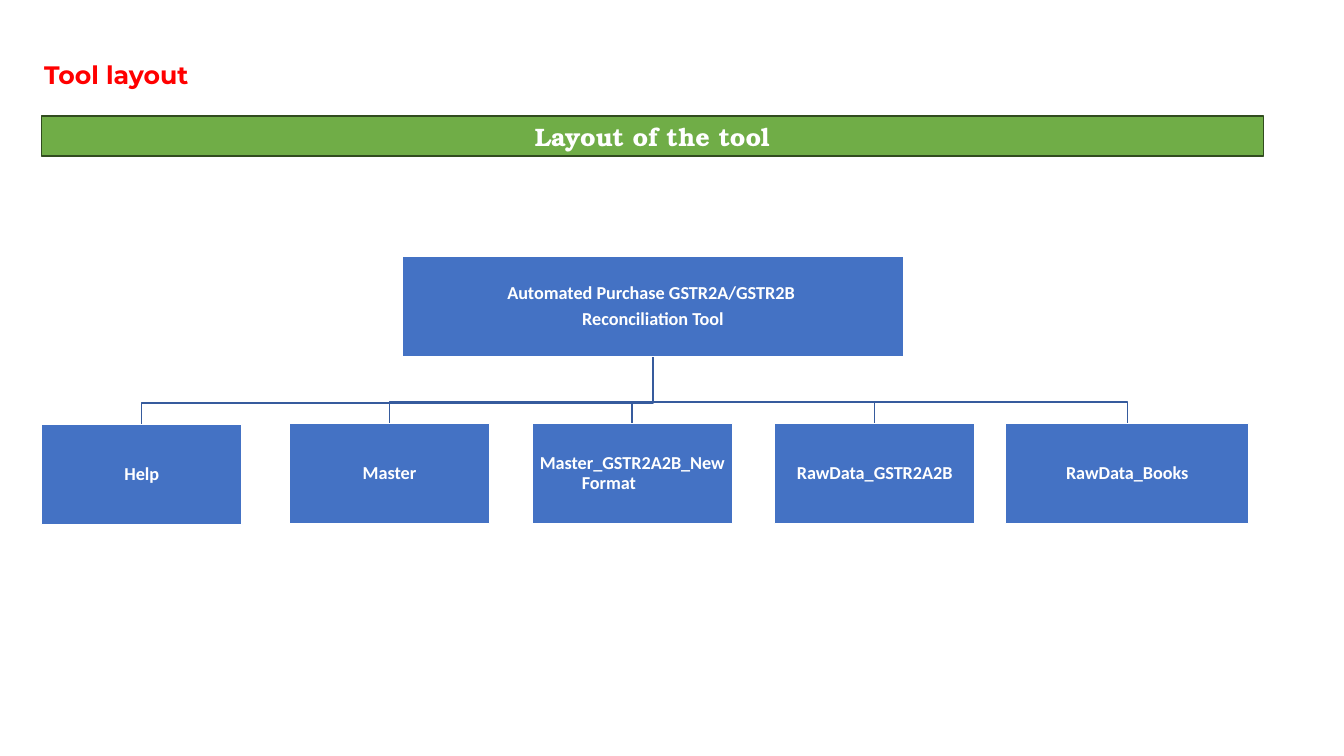
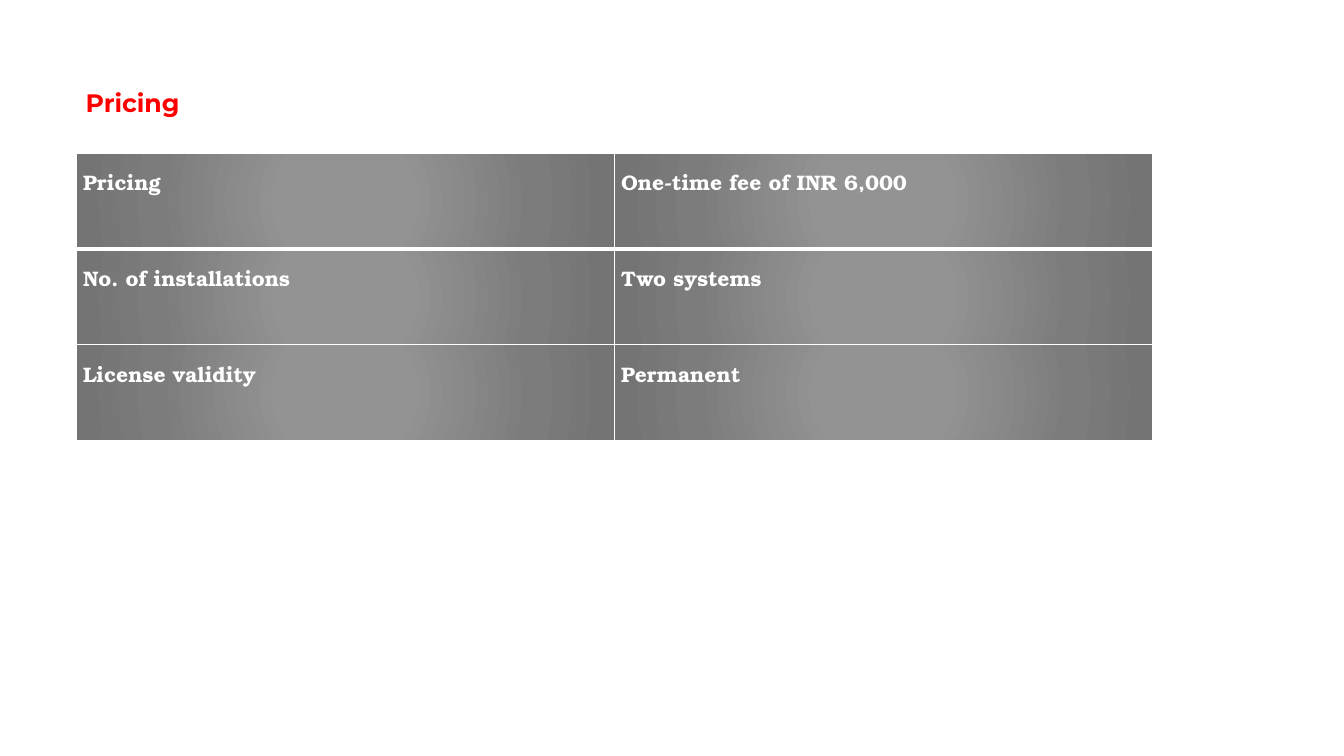
"""Build two slides: the layout of a reconciliation tool and its pricing."""
from dataclasses import dataclass

from lxml import etree
from pptx import Presentation
from pptx.dml.color import RGBColor
from pptx.enum.shapes import MSO_SHAPE
from pptx.enum.text import MSO_ANCHOR, PP_ALIGN
from pptx.oxml.ns import qn
from pptx.util import Emu, Inches, Pt

RECTANGLE = MSO_SHAPE.RECTANGLE
MIDDLE = MSO_ANCHOR.MIDDLE
TOP = MSO_ANCHOR.TOP
CENTER = PP_ALIGN.CENTER
LEFT = PP_ALIGN.LEFT

SLIDE_WIDTH = Inches(13.33)
SLIDE_HEIGHT = Inches(7.5)
BLANK_LAYOUT = 6


@dataclass(frozen=True)
class TextStyle:
    """The font, size and colour of a run."""
    font: str
    size: float
    color: str


@dataclass(frozen=True)
class Theme:
    """The colours, type sizes and line widths of both slides."""
    title: TextStyle = TextStyle("Montserrat", 18, "FF0000")
    banner: TextStyle = TextStyle("TeX Gyre Bonum", 18, "FFFFFF")
    node: TextStyle = TextStyle("Calibri", 13, "FFFFFF")
    cell: TextStyle = TextStyle("TeX Gyre Bonum", 15, "FFFFFF")
    banner_fill: str = "70AD47"
    banner_line: str = "314C1F"
    node_fill: str = "4472C4"
    connector: str = "365B9D"
    border: str = "FFFFFF"
    cell_gradient: tuple = ((0, "939393"), (23, "939393"), (69, "7C7C7C"), (97, "747474"))
    line_width: float = 1
    heavy_line_width: float = 3
    node_inset: float = 0.01


@dataclass(frozen=True)
class Box:
    """A rectangle in percent of the slide's width and height."""
    left: float
    top: float
    width: float
    height: float

    @property
    def center(self) -> float:
        """Return the horizontal middle."""
        return self.left + self.width / 2

    @property
    def bottom(self) -> float:
        """Return the lower edge."""
        return self.top + self.height

    def lengths(self) -> tuple:
        """Return left, top, width and height as lengths."""
        return across(self.left), down(self.top), across(self.width), down(self.height)


@dataclass(frozen=True)
class Node:
    """One box of the tree and its lines of text."""
    lines: tuple
    box: Box


THEME = Theme()
BRANCH_TOP = 56
BUS_RISE = 2.8
NODE_HEIGHT = 13.27
BRANCH_WIDTH = 14.93

ROOT = Node(
    ("Automated Purchase GSTR2A/GSTR2B ", "Reconciliation Tool"),
    Box(29.9, 33.87, 37.36, NODE_HEIGHT),
)
BRANCHES = [
    Node((name,), Box(left, top, width, NODE_HEIGHT))
    for name, left, top, width in (
        ("RawData_Books", 74.83, BRANCH_TOP, 18.08),
        ("RawData_GSTR2A2B", 57.61, BRANCH_TOP, BRANCH_WIDTH),
        ("Master_GSTR2A2B_New Format\t", 39.57, BRANCH_TOP, BRANCH_WIDTH),
        ("Master", 21.51, BRANCH_TOP, BRANCH_WIDTH),
        ("Help", 3.08, BRANCH_TOP + 0.13, BRANCH_WIDTH),
    )
]
PRICING = (
    ("Pricing", "One-time fee of INR 6,000"),
    ("No. of installations", "Two systems"),
    ("License validity", "Permanent"),
)


def across(percent: float) -> Emu:
    """Turn a percentage of the slide's width into a length."""
    return Emu(round(SLIDE_WIDTH * percent / 100))


def down(percent: float) -> Emu:
    """Turn a percentage of the slide's height into a length."""
    return Emu(round(SLIDE_HEIGHT * percent / 100))


def add_text(paragraph, text: str, style: TextStyle, alignment=LEFT) -> None:
    """Add one bold run to a paragraph."""
    paragraph.alignment = alignment
    run = paragraph.add_run()
    run.text = text
    run.font.name = style.font
    run.font.size = Pt(style.size)
    run.font.bold = True
    run.font.color.rgb = RGBColor.from_string(style.color)


def add_title(slide, text: str, box: Box) -> None:
    """Add the red slide title."""
    frame = slide.shapes.add_textbox(*box.lengths()).text_frame
    frame.word_wrap = True
    add_text(frame.paragraphs[0], text, THEME.title)


def set_line(shape, color: str) -> None:
    """Give a shape a thin line and no shadow."""
    shape.shadow.inherit = False
    shape.line.color.rgb = RGBColor.from_string(color)
    shape.line.width = Pt(THEME.line_width)


def add_rectangle(slide, box: Box, fill: str, line: str):
    """Add a plain filled rectangle with a thin outline."""
    shape = slide.shapes.add_shape(RECTANGLE, *box.lengths())
    set_line(shape, line)
    shape.fill.solid()
    shape.fill.fore_color.rgb = RGBColor.from_string(fill)
    shape.text_frame.word_wrap = True
    shape.text_frame.vertical_anchor = MIDDLE
    return shape


def add_banner(slide, text: str, box: Box) -> None:
    """Add the green heading band."""
    shape = add_rectangle(slide, box, THEME.banner_fill, THEME.banner_line)
    add_text(shape.text_frame.paragraphs[0], text, THEME.banner, CENTER)


def add_node(slide, node: Node) -> None:
    """Add one box of the tree with its centred lines."""
    frame = add_rectangle(slide, node.box, THEME.node_fill, THEME.border).text_frame
    inset = Inches(THEME.node_inset)
    frame.margin_left = frame.margin_right = inset
    frame.margin_top = frame.margin_bottom = inset
    for index, line in enumerate(node.lines):
        paragraph = frame.add_paragraph() if index else frame.paragraphs[0]
        paragraph.line_spacing = 0.9
        paragraph.space_after = Pt(0.35 * THEME.node.size)
        add_text(paragraph, line, THEME.node, CENTER)


def add_branch_line(slide, parent: Box, child: Box) -> None:
    """Draw the open bent outline from a parent down to a child."""
    bus = child.top - BUS_RISE
    corners = (
        (parent.center, bus),
        (child.center, bus),
        (child.center, child.top),
    )
    builder = slide.shapes.build_freeform(across(parent.center), down(parent.bottom))
    builder.add_line_segments([(across(x), down(y)) for x, y in corners], close=False)
    bend = builder.convert_to_shape()
    bend.fill.background()
    set_line(bend, THEME.connector)


def add_tree(slide, root: Node, branches: list) -> None:
    """Draw the bent lines, then all boxes above them."""
    for branch in branches:
        add_branch_line(slide, root.box, branch.box)
    for node in (root, *reversed(branches)):
        add_node(slide, node)


def add_color(parent, color: str) -> None:
    """Append an RGB colour element."""
    etree.SubElement(parent, qn("a:srgbClr"), val=color)


def style_cell(cell, widths: dict) -> None:
    """Give a cell its borders and its circular gradient."""
    properties = cell._tc.get_or_add_tcPr()
    for side, width in widths.items():
        line = etree.SubElement(properties, qn(f"a:ln{side}"), w=str(Pt(width)))
        add_color(etree.SubElement(line, qn("a:solidFill")), THEME.border)
    gradient = etree.SubElement(properties, qn("a:gradFill"), rotWithShape="1")
    stops = etree.SubElement(gradient, qn("a:gsLst"))
    for position, color in THEME.cell_gradient:
        add_color(etree.SubElement(stops, qn("a:gs"), pos=str(position * 1000)), color)
    circle = etree.SubElement(gradient, qn("a:path"), path="circle")
    etree.SubElement(circle, qn("a:fillToRect"), l="50000", t="50000", r="50000", b="50000")


def add_pricing_table(slide, rows: tuple, box: Box) -> None:
    """Add the table, with a heavy rule under its first row."""
    frame = slide.shapes.add_table(len(rows), len(rows[0]), *box.lengths())
    table = frame.table
    table.first_row = table.horz_banding = False
    for row_index, row in enumerate(rows):
        widths = dict.fromkeys("LRTB", THEME.line_width)
        if row_index == 0:
            widths["B"] = THEME.heavy_line_width
        elif row_index == 1:
            widths["T"] = THEME.heavy_line_width
        for column_index, text in enumerate(row):
            cell = table.cell(row_index, column_index)
            cell.margin_left = cell.margin_right = Inches(0.07)
            cell.margin_top, cell.margin_bottom = Pt(19.5), 0
            cell.vertical_anchor = TOP
            paragraph = cell.text_frame.paragraphs[0]
            paragraph.line_spacing = Pt(11.8)
            add_text(paragraph, text, THEME.cell)
            style_cell(cell, widths)


def main() -> None:
    """Build and save the presentation."""
    presentation = Presentation()
    presentation.slide_width = SLIDE_WIDTH
    presentation.slide_height = SLIDE_HEIGHT
    blank = presentation.slide_layouts[BLANK_LAYOUT]

    layout_slide = presentation.slides.add_slide(blank)
    add_title(layout_slide, "Tool layout", Box(2.55, 7.2, 44.34, 5.33))
    add_banner(layout_slide, "Layout of the tool", Box(3.08, 15.33, 90.92, 5.33))
    add_tree(layout_slide, ROOT, BRANCHES)

    pricing_slide = presentation.slides.add_slide(blank)
    add_title(pricing_slide, "Pricing", Box(5.63, 10.93, 68.34, 5.33))
    add_pricing_table(pricing_slide, PRICING, Box(5.66, 20.27, 80.07, 38))

    presentation.save("out.pptx")


if __name__ == "__main__":
    main()
